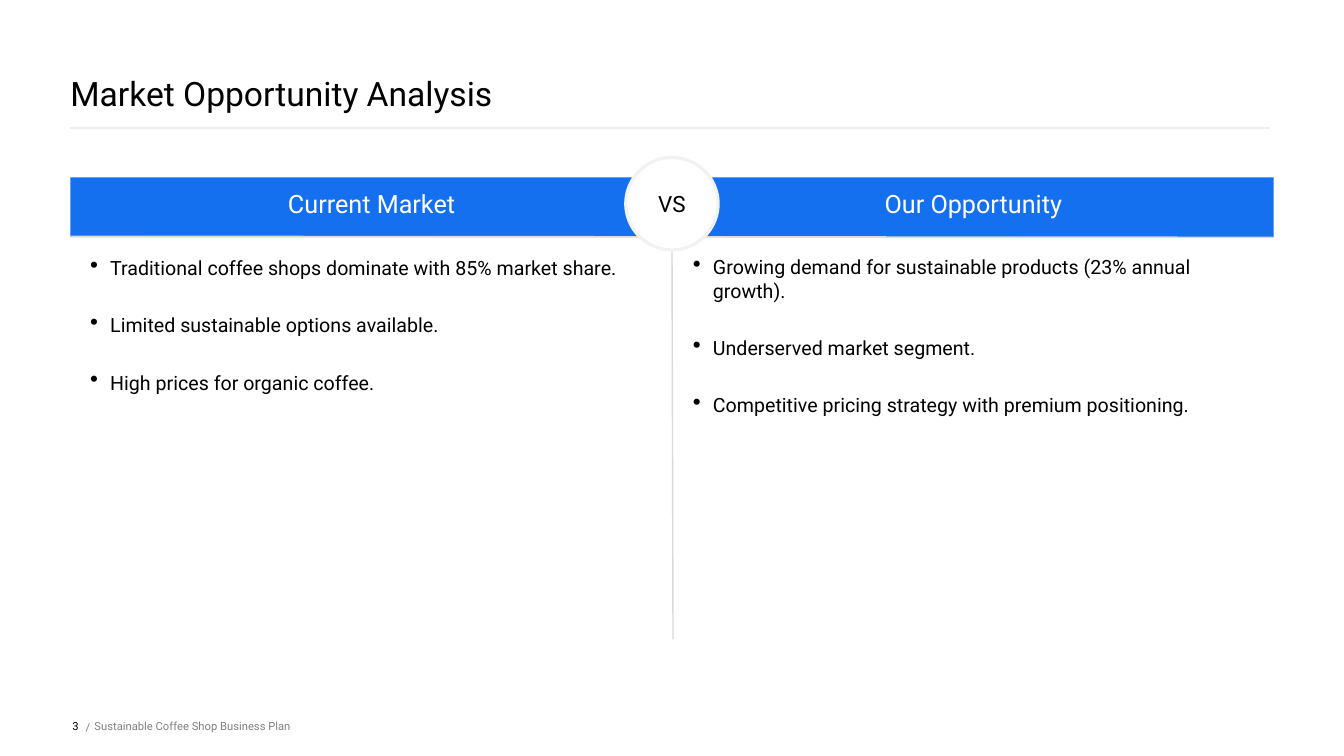
from lxml import etree
from pptx import Presentation
from pptx import util as u
from pptx.dml.color import RGBColor
from pptx.enum import shapes, text
from pptx.oxml.ns import qn

TITLE = "Market Opportunity Analysis"
VERSUS = "VS"
COLUMNS = [
    {
        "heading": "Current Market",
        "heading_box": (151, 183, 406, 27),
        "points_box": (86, 244, 506, 350),
        "points": [
            "Traditional coffee shops dominate with 85% market share.",
            "Limited sustainable options available.",
            "High prices for organic coffee.",
        ],
    },
    {
        "heading": "Our Opportunity",
        "heading_box": (723, 183, 408, 27),
        "points_box": (660, 243, 506, 351),
        "points": [
            "Growing demand for sustainable products (23% annual growth).",
            "Underserved market segment.",
            "Competitive pricing strategy with premium positioning.",
        ],
    },
]
FOOTER = [
    ("3", (45, 662, 30, 58), "black", text.PP_ALIGN.RIGHT),
    (" /", (79, 663, 12, 58), "grey", text.PP_ALIGN.LEFT),
    ("Sustainable Coffee Shop Business Plan", (90, 662, 827, 58), "grey", text.PP_ALIGN.LEFT),
]
RULES = [
    ((640, 225), (641, 609), "divider", 1),
    ((67, 225), (1212, 226), "divider", 1),
    ((67, 122), (1210, 122), "title_rule", 2),
]
COLORS = {
    "black": "000000",
    "white": "FFFFFF",
    "grey": "808080",
    "blue": "1570EF",
    "divider": "D9D9D9",
    "title_rule": "EAECF0",
    "ring": "F2F2F2",
}
FONT = "Roboto"
PX = 9525
INDENT = 19


def px(*lengths):
    return [u.Emu(length * PX) for length in lengths]


def color(name):
    return RGBColor.from_string(COLORS[name])


def write(shape, lines, size, ink, align=text.PP_ALIGN.LEFT, anchor=text.MSO_ANCHOR.TOP):
    frame = shape.text_frame
    frame.auto_size = text.MSO_AUTO_SIZE.NONE
    frame.word_wrap = True
    frame.vertical_anchor = anchor
    frame.margin_left = frame.margin_top = frame.margin_right = frame.margin_bottom = 0
    frame.text = "\n".join(lines)
    for paragraph in frame.paragraphs:
        paragraph.alignment = align
        paragraph.font.name = FONT
        paragraph.font.size = u.Pt(size)
        paragraph.font.color.rgb = color(ink)
    return frame.paragraphs


def add_bullet(paragraph):
    paragraph.space_after = u.Pt(24)
    properties = paragraph._p.get_or_add_pPr()
    properties.set("marL", str(INDENT * PX))
    properties.set("indent", str(-INDENT * PX))
    size = etree.Element(qn("a:buSzPct"), val="120000")
    bullet = etree.Element(qn("a:buChar"), char="•")
    properties.find(qn("a:spcAft")).addnext(size)
    size.addnext(bullet)


def add_panel(slide, kind, box, fill):
    panel = slide.shapes.add_shape(kind, *px(*box))
    panel.shadow.inherit = False
    panel.fill.solid()
    panel.fill.fore_color.rgb = color(fill)
    return panel


def add_rule(slide, start, end, ink, width):
    rule = slide.shapes.add_connector(shapes.MSO_CONNECTOR.STRAIGHT, *px(*start, *end))
    rule.line.color.rgb = color(ink)
    rule.line.width = u.Pt(width)
    etree.SubElement(rule._element.spPr, qn("a:effectLst"))


def main():
    deck = Presentation()
    deck.slide_width, deck.slide_height = px(1280, 720)
    slide = deck.slides.add_slide(deck.slide_layouts[5])

    title = slide.shapes.title
    title.left, title.top, title.width, title.height = px(67, 0, 1146, 108)
    write(title, [TITLE], 24, "black", anchor=text.MSO_ANCHOR.BOTTOM)

    band = add_panel(slide, shapes.MSO_SHAPE.RECTANGLE, (67, 169, 1146, 57), "blue")
    band.line.fill.background()
    for rule in RULES:
        add_rule(slide, *rule)

    for column in COLUMNS:
        heading = slide.shapes.add_textbox(*px(*column["heading_box"]))
        for line in write(heading, [column["heading"]], 18, "white", text.PP_ALIGN.CENTER):
            line.line_spacing = 0.9
        points = slide.shapes.add_textbox(*px(*column["points_box"]))
        for point in write(points, column["points"], 14, "black"):
            add_bullet(point)

    badge = add_panel(slide, shapes.MSO_SHAPE.OVAL, (596, 150, 88, 88), "white")
    badge.line.color.rgb = color("ring")
    badge.line.width = u.Pt(2.25)
    write(badge, [VERSUS], 16, "black", text.PP_ALIGN.CENTER, text.MSO_ANCHOR.MIDDLE)

    for label, box, ink, align in FOOTER:
        part = slide.shapes.add_textbox(*px(*box))
        write(part, [label], 8, ink, align, text.MSO_ANCHOR.MIDDLE)

    deck.save("out.pptx")


if __name__ == "__main__":
    main()
